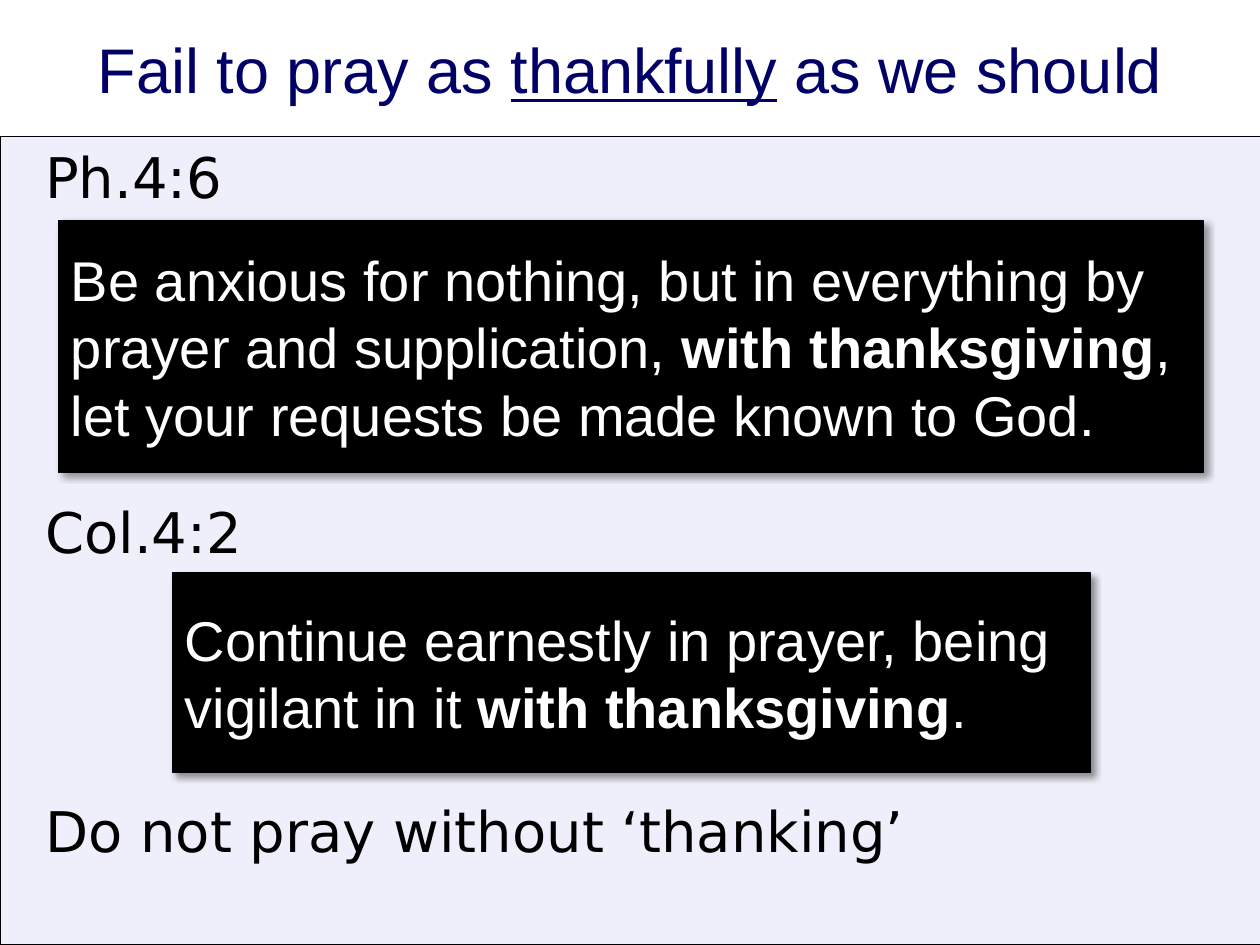
from lxml import etree
from pptx import Presentation
from pptx.dml.color import RGBColor
from pptx.enum import shapes, text
from pptx.oxml import ns
from pptx.util import Pt

COLORS = {
    "backdrop": "FCFCFC", "title": "000066", "title_fill": "FFFFFF",
    "panel": "9999FF", "ink": "000000", "verse": "FFFFFF",
}


def add_box(page, left, top, width, height, fill):
    box = page.shapes.add_shape(
        shapes.MSO_SHAPE.RECTANGLE, Pt(left), Pt(top), Pt(width), Pt(height))
    box.shadow.inherit = False
    box.fill.solid()
    box.fill.fore_color.rgb = RGBColor.from_string(COLORS[fill])
    box.line.color.rgb = RGBColor.from_string(COLORS["ink"])
    box.line.width = Pt(0.75)
    box.text_frame.word_wrap = True
    return box


def style(para, name, size, color, align):
    para.alignment = align
    para.font.name = name
    para.font.size = Pt(size)
    para.font.color.rgb = RGBColor.from_string(COLORS[color])


deck = Presentation()
deck.slide_width, deck.slide_height = Pt(720), Pt(540)
page = deck.slides.add_slide(deck.slide_layouts[5])
page.background.fill.solid()
page.background.fill.fore_color.rgb = RGBColor.from_string(COLORS["backdrop"])

title = page.shapes.title
title.left, title.top, title.width, title.height = Pt(0), Pt(0), Pt(720), Pt(78.5)
title.fill.solid()
title.fill.fore_color.rgb = RGBColor.from_string(COLORS["title_fill"])
title.text_frame.vertical_anchor = text.MSO_ANCHOR.MIDDLE
para = title.text_frame.paragraphs[0]
style(para, "Arial", 36, "title", text.PP_ALIGN.CENTER)
for words, underlined in [("Fail to pray as ", False), ("thankfully", True),
                          (" as we should", False)]:
    span = para.add_run()
    span.text = words
    span.font.underline = underlined

panel = add_box(page, 0, 78, 721.5, 462, "panel")
color = panel.fill._xPr.find(".//" + ns.qn("a:srgbClr"))
etree.SubElement(color, ns.qn("a:alpha"), val="12000")
frame = panel.text_frame
frame.vertical_anchor = text.MSO_ANCHOR.TOP
frame.text = "Ph.4:6\nCol.4:2\nDo not pray without ‘thanking’"
for para, gap in zip(frame.paragraphs, [0, 164.5, 132.5]):
    style(para, "DejaVu Sans", 32, "ink", text.PP_ALIGN.LEFT)
    para.space_before = Pt(gap)
    para._p.get_or_add_pPr().set("marL", str(Pt(18.75)))

verses = [
    ((33.5, 126, 654, 144),
     "Be anxious for nothing, but in everything by prayer and supplication, ",
     ", let your requests be made known to God."),
    ((98.5, 327.5, 524.5, 114),
     "Continue earnestly in prayer, being vigilant in it ", "."),
]
for place, before, after in verses:
    box = add_box(page, *place, "ink")
    effects = box._element.spPr.find(ns.qn("a:effectLst"))
    shadow = etree.SubElement(
        effects, ns.qn("a:outerShdw"), blurRad=str(Pt(4)), dist=str(Pt(3)),
        dir="2700000", algn="tl", rotWithShape="0")
    color = etree.SubElement(shadow, ns.qn("a:srgbClr"), val=COLORS["ink"])
    etree.SubElement(color, ns.qn("a:alpha"), val="40000")
    box.text_frame.vertical_anchor = text.MSO_ANCHOR.MIDDLE
    para = box.text_frame.paragraphs[0]
    style(para, "Arial", 32, "verse", text.PP_ALIGN.LEFT)
    for words, bold in [(before, False), ("with thanksgiving", True), (after, False)]:
        span = para.add_run()
        span.text = words
        span.font.bold = bold

deck.save("out.pptx")
